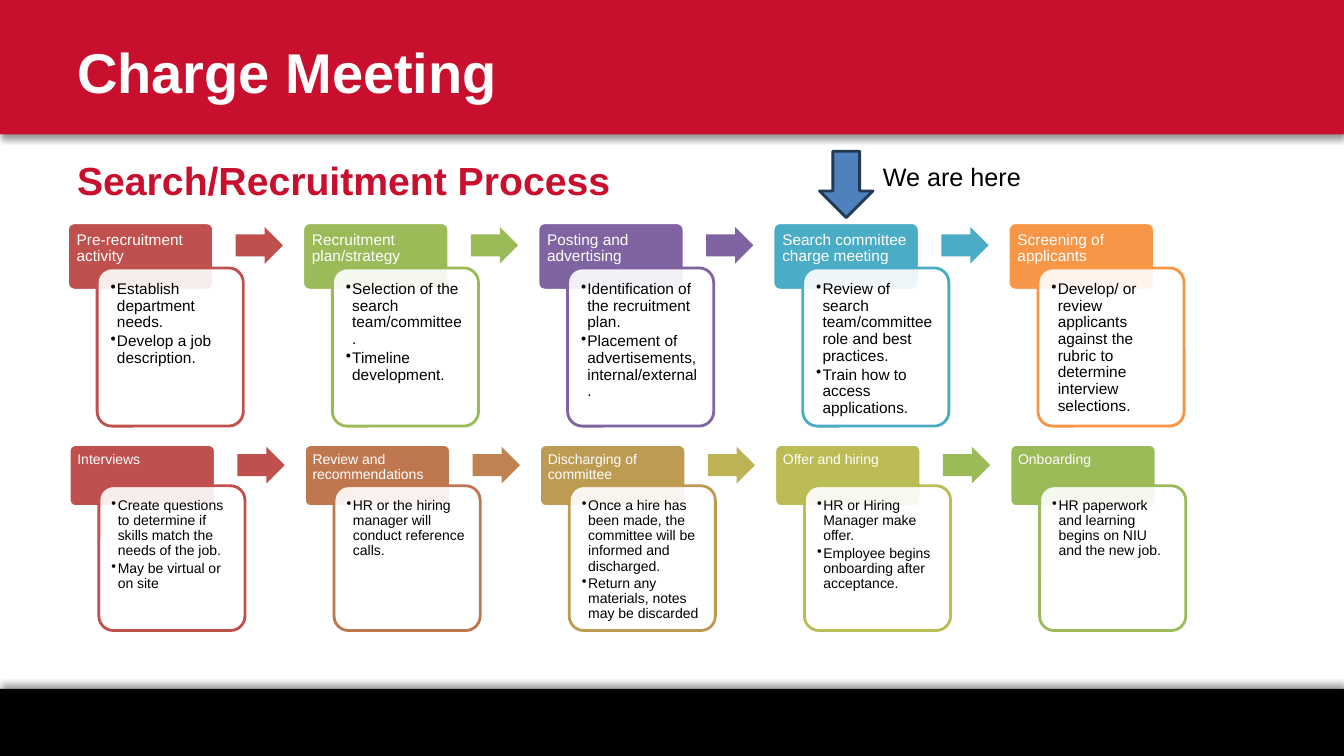
import pptx
import pptx.dml.color
import pptx.enum.shapes
import pptx.enum.text
import pptx.oxml.ns
import pptx.util
from lxml import etree

Pt = pptx.util.Pt
RGBColor = pptx.dml.color.RGBColor
SHAPE = pptx.enum.shapes.MSO_SHAPE
ANCHOR = pptx.enum.text.MSO_ANCHOR
ALIGN = pptx.enum.text.PP_ALIGN
qn = pptx.oxml.ns.qn

WHITE = RGBColor(0xFF, 0xFF, 0xFF)
BLACK = RGBColor(0x00, 0x00, 0x00)
CRIMSON = RGBColor(0xC8, 0x10, 0x2E)
RED = RGBColor(0xC0, 0x50, 0x4D)
GREEN = RGBColor(0x9B, 0xBB, 0x59)
PURPLE = RGBColor(0x80, 0x64, 0xA2)
TEAL = RGBColor(0x4B, 0xAC, 0xC6)
ORANGE = RGBColor(0xF7, 0x96, 0x46)
COPPER = RGBColor(0xBF, 0x77, 0x50)
BRONZE = RGBColor(0xBE, 0x83, 0x51)
OCHRE = RGBColor(0xBD, 0x9B, 0x53)
MUSTARD = RGBColor(0xBD, 0xB2, 0x55)
OLIVE = RGBColor(0xBC, 0xBC, 0x56)
BLUE = RGBColor(0x4F, 0x81, 0xBD)
NAVY = RGBColor(0x23, 0x39, 0x53)

SLIDE_WIDTH, SLIDE_HEIGHT = 960, 540
STEP_PITCH, STEP_WIDTH = 168, 104.4
CARD_SHIFT = 21.2
ARROW_SHIFT, ARROW_WIDTH, ARROW_HEIGHT = 120.2, 33.8, 26.2

# Each step: heading, colour, bullets, colour of the arrow that follows
PREPARATION = [
    ("Pre-recruitment activity", RED,
     ["Establish department needs.", "Develop a job description."], RED),
    ("Recruitment plan/strategy", GREEN,
     ["Selection of the search team/committee.", "Timeline development."], GREEN),
    ("Posting and advertising", PURPLE,
     ["Identification of the recruitment plan.",
      "Placement of advertisements, internal/external."], PURPLE),
    ("Search committee charge meeting", TEAL,
     ["Review of search team/committee role and best practices.",
      "Train how to access applications."], TEAL),
    ("Screening of applicants", ORANGE,
     ["Develop/ or review applicants against the rubric to determine "
      "interview selections."], None),
]
SELECTION = [
    ("Interviews", RED,
     ["Create questions to determine if skills match the needs of the job.",
      "May be virtual or on site"], RED),
    ("Review and recommendations", COPPER,
     ["HR or the hiring manager will conduct reference calls."], BRONZE),
    ("Discharging of committee", OCHRE,
     ["Once a hire has been made, the committee will be informed and discharged.",
      "Return any materials, notes may be discarded"], MUSTARD),
    ("Offer and hiring", OLIVE,
     ["HR or Hiring Manager make offer.",
      "Employee begins onboarding after acceptance."], GREEN),
    ("Onboarding", GREEN,
     ["HR paperwork and learning begins on NIU and the new job."], None),
]


class SlideBuilder:
    def __init__(self, slide, font_name):
        self.slide = slide
        self.font_name = font_name
        self.shapes = slide.shapes

    def add_text_run(self, paragraph, text, size, color, bold=False):
        run = paragraph.add_run()
        run.text = text
        run.font.name = self.font_name
        run.font.size = Pt(size)
        run.font.bold = bold
        run.font.color.rgb = color

    def frame(self, shape, insets, anchor=ANCHOR.TOP):
        frame = shape.text_frame
        frame.word_wrap = True
        frame.vertical_anchor = anchor
        (frame.margin_left, frame.margin_top,
         frame.margin_right, frame.margin_bottom) = map(Pt, insets)
        return frame

    def shape(self, kind, box, fill, line=None, adjustments=()):
        shape = self.shapes.add_shape(kind, *map(Pt, box))
        shape.shadow.inherit = False
        shape.fill.solid()
        shape.fill.fore_color.rgb = fill
        if line is None:
            shape.line.fill.background()
        else:
            shape.line.color.rgb = line
            shape.line.width = Pt(2)
        for index, value in enumerate(adjustments):
            shape.adjustments[index] = value
        return shape

    def band(self, top, height, fill, shadow_degrees):
        band = self.shape(SHAPE.RECTANGLE, (0, top, SLIDE_WIDTH, height), fill)
        effects = band.element.spPr.find(qn("a:effectLst"))
        shadow = etree.SubElement(
            effects, qn("a:outerShdw"), blurRad=str(Pt(4)), dist=str(Pt(3)),
            dir=str(shadow_degrees * 60000), rotWithShape="0")
        color = etree.SubElement(shadow, qn("a:srgbClr"), val=str(BLACK))
        etree.SubElement(color, qn("a:alpha"), val="40000")

    def title(self, text, box):
        title = self.slide.shapes.title
        title.left, title.top, title.width, title.height = map(Pt, box)
        frame = self.frame(title, (7.2, 3.6, 7.2, 3.6), ANCHOR.MIDDLE)
        frame.paragraphs[0].alignment = ALIGN.LEFT
        self.add_text_run(frame.paragraphs[0], text, 40, WHITE, bold=True)
        # Bring the title in front of the bands
        title.element.getparent().append(title.element)

    def text(self, text, box, size, color, bold=False):
        shape = self.shapes.add_textbox(*map(Pt, box))
        frame = self.frame(shape, (7.2, 3.6, 7.2, 3.6))
        self.add_text_run(frame.paragraphs[0], text, size, color, bold)

    def heading(self, text, box, size, color):
        heading = self.shape(SHAPE.ROUNDED_RECTANGLE, box, color, WHITE, [0.1])
        inset = size * 0.6 - 1.4
        frame = self.frame(heading, (inset,) * 4)
        paragraph = frame.paragraphs[0]
        paragraph.alignment = ALIGN.LEFT
        paragraph.line_spacing = 0.9
        self.add_text_run(paragraph, text, size, WHITE)

    def card(self, bullets, box, size, color):
        card = self.shape(SHAPE.ROUNDED_RECTANGLE, box, WHITE, color, [0.1])
        fill = card.element.spPr.find(qn("a:solidFill"))
        etree.SubElement(fill[0], qn("a:alpha"), val="90000")
        frame = self.frame(card, (size * 0.6,) * 4)
        for index, bullet in enumerate(bullets):
            paragraph = frame.add_paragraph() if index else frame.paragraphs[0]
            paragraph.alignment = ALIGN.LEFT
            paragraph.line_spacing = 0.9
            paragraph.space_after = Pt(size * 0.15)
            properties = paragraph._p.get_or_add_pPr()
            properties.set("marL", str(Pt(4.5)))
            properties.set("indent", str(Pt(-4.5)))
            etree.SubElement(properties, qn("a:buChar"), char="•")
            self.add_text_run(paragraph, bullet, size, BLACK)

    def process(self, steps, left, top, heading_height, card_shift, card_height, size):
        self.shapes = self.slide.shapes.add_group_shape().shapes
        for index, (name, color, bullets, arrow_color) in enumerate(steps):
            x = left + index * STEP_PITCH
            self.heading(name, (x, top, STEP_WIDTH, heading_height), size, color)
            self.card(bullets, (x + CARD_SHIFT, top + card_shift, STEP_WIDTH, card_height),
                      size, color)
            if arrow_color is not None:
                arrow_top = top + (card_shift - ARROW_HEIGHT) / 2
                self.shape(SHAPE.RIGHT_ARROW,
                           (x + ARROW_SHIFT, arrow_top, ARROW_WIDTH, ARROW_HEIGHT),
                           arrow_color, adjustments=[0.6, 0.5])
        self.shapes = self.slide.shapes


def main():
    presentation = pptx.Presentation()
    presentation.slide_width = Pt(SLIDE_WIDTH)
    presentation.slide_height = Pt(SLIDE_HEIGHT)
    slide = presentation.slides.add_slide(presentation.slide_layouts[5])
    builder = SlideBuilder(slide, "Arial")

    # Bands and titles
    builder.band(492, 48, BLACK, 270)
    builder.band(0, 96, CRIMSON, 90)
    builder.title("Charge Meeting", (48, 12, 792, 78))
    builder.text("Search/Recruitment Process", (48, 108, 800, 42), 28, CRIMSON, bold=True)

    # Two rows of process steps
    builder.process(PREPARATION, 48.2, 159.1, 48.2, 32.3, 113, 11)
    builder.process(SELECTION, 49.4, 317.5, 44.3, 29.5, 103.4, 10)

    # Marker for the current step
    builder.shape(SHAPE.DOWN_ARROW, (585.4, 108, 38.2, 47.5), BLUE, NAVY)
    builder.text("We are here", (623.5, 111.6, 158.4, 29), 18, BLACK)

    presentation.save("out.pptx")


if __name__ == "__main__":
    main()
